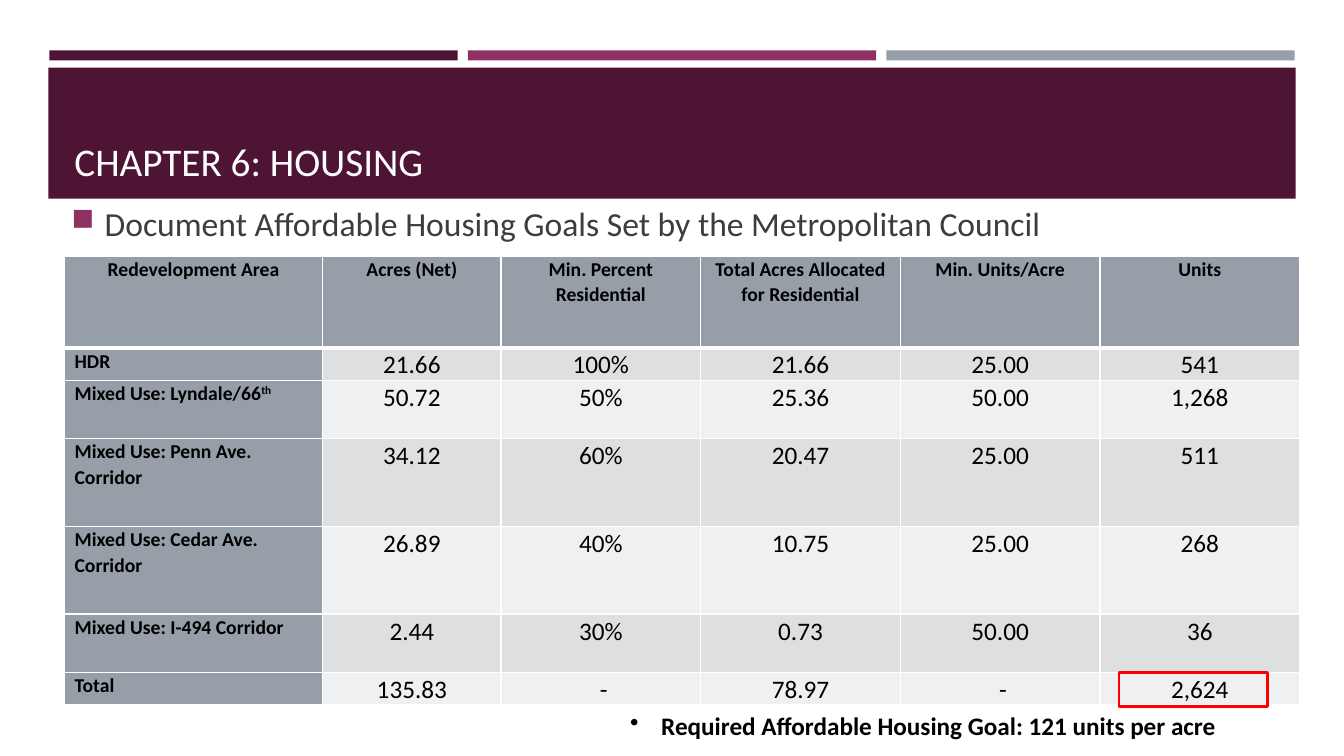
from lxml import etree
from pptx import Presentation
from pptx.dml.color import RGBColor
from pptx.enum.shapes import MSO_SHAPE
from pptx.enum.text import MSO_ANCHOR, PP_ALIGN
from pptx.oxml.ns import qn
from pptx.util import Inches, Pt

RECTANGLE = MSO_SHAPE.RECTANGLE
TOP, MIDDLE, BOTTOM = MSO_ANCHOR.TOP, MSO_ANCHOR.MIDDLE, MSO_ANCHOR.BOTTOM
LEFT, CENTER = PP_ALIGN.LEFT, PP_ALIGN.CENTER

FONT = "Calibri"
PLUM, MAGENTA, GRAY = "4D1434", "903163", "969FA7"
WHITE, BLACK, RED, CHARCOAL = "FFFFFF", "000000", "FF0000", "3D3D3D"
BANDS = ("DDDFE1", "EFF0F1")

# Three accent bars share one column step
BAR_LEFT, BAR_WIDTH, BAR_STEP = 0.49, 4.05, 4.15

TABLE_LEFT, TABLE_TOP = 0.64, 2.54
COLUMN_WIDTHS = [2.56, 1.77] + [1.98] * 4
ROW_HEIGHTS = [0.91, 0.31, 0.58, 0.87, 0.87, 0.58, 0.31]
HOUSING_ROWS = [
    ("Redevelopment Area", "Acres (Net)", "Min. Percent Residential",
     "Total Acres Allocated for Residential", "Min. Units/Acre", "Units"),
    ("HDR", "21.66", "100%", "21.66", "25.00", "541"),
    ("Mixed Use: Lyndale/66^th", "50.72", "50%", "25.36", "50.00", "1,268"),
    ("Mixed Use: Penn Ave. Corridor", "34.12", "60%", "20.47", "25.00", "511"),
    ("Mixed Use: Cedar Ave. Corridor", "26.89", "40%", "10.75", "25.00", "268"),
    ("Mixed Use: I-494 Corridor", "2.44", "30%", "0.73", "50.00", "36"),
    ("Total", "135.83", " -", "78.97", " -", "2,624"),
]


def color(value):
    return RGBColor.from_string(value)


def style_font(para, size, ink, bold=False):
    para.font.name = FONT
    para.font.size = Pt(size)
    para.font.bold = bold
    para.font.color.rgb = color(ink)


def add_rectangle(page, left, top, width, height, fill=None, line=None):
    box = page.shapes.add_shape(RECTANGLE, Inches(left), Inches(top),
                                Inches(width), Inches(height))
    box.shadow.inherit = False
    if fill:
        box.fill.solid()
        box.fill.fore_color.rgb = color(fill)
    else:
        box.fill.background()
    if line:
        box.line.color.rgb = color(line)
        box.line.width = Pt(1.75)
    else:
        box.line.fill.background()


def add_text(page, left, top, width, height, text, size, ink, anchor, bold=False):
    box = page.shapes.add_textbox(Inches(left), Inches(top),
                                  Inches(width), Inches(height))
    frame = box.text_frame
    frame.word_wrap = True
    frame.vertical_anchor = anchor
    para = frame.paragraphs[0]
    para.text = text
    style_font(para, size, ink, bold)
    return para


def add_bullet(para, mark, indent, ink, percent=100):
    properties = para._p.get_or_add_pPr()
    properties.set("marL", str(Inches(indent)))
    properties.set("indent", str(-Inches(indent)))
    bullet_color = etree.Element(qn("a:buClr"))
    etree.SubElement(bullet_color, qn("a:srgbClr"), val=ink)
    bullet_size = etree.Element(qn("a:buSzPct"), val=str(percent * 1000))
    bullet_mark = etree.Element(qn("a:buChar"), char=mark)
    # Bullet settings come just before the default run settings
    defaults = properties.find(qn("a:defRPr"))
    for part in (bullet_color, bullet_size, bullet_mark):
        defaults.addprevious(part)


def set_borders(cell, top, bottom):
    properties = cell._tc.get_or_add_tcPr()
    widths = {"a:lnL": 1, "a:lnR": 1, "a:lnT": top, "a:lnB": bottom}
    for place, (tag, width) in enumerate(widths.items()):
        border = etree.Element(qn(tag), w=str(Pt(width)))
        fill = etree.SubElement(border, qn("a:solidFill"))
        etree.SubElement(fill, qn("a:srgbClr"), val=WHITE)
        properties.insert(place, border)


def fill_cell(cell, text, row, column):
    is_heading = row == 0 or column == 0
    cell.margin_left = cell.margin_right = Inches(0.1)
    cell.margin_top = cell.margin_bottom = 0
    cell.vertical_anchor = TOP
    cell.fill.solid()
    cell.fill.fore_color.rgb = color(GRAY if is_heading else BANDS[(row - 1) % 2])
    set_borders(cell, top=3 if row == 1 else 1, bottom=3 if row == 0 else 1)

    para = cell.text_frame.paragraphs[0]
    para.alignment = LEFT if column == 0 and row > 0 else CENTER
    para.line_spacing = 1.07
    style_font(para, 14 if is_heading else 18, BLACK, is_heading)
    # A caret marks the start of a superscript
    base, _, superscript = text.partition("^")
    para.add_run().text = base
    if superscript:
        span = para.add_run()
        span.text = superscript
        span._r.get_or_add_rPr().set("baseline", "30000")


def add_housing_table(page):
    table = page.shapes.add_table(
        len(ROW_HEIGHTS), len(COLUMN_WIDTHS), Inches(TABLE_LEFT), Inches(TABLE_TOP),
        Inches(sum(COLUMN_WIDTHS)), Inches(sum(ROW_HEIGHTS))).table
    table.first_col = True
    for column, width in zip(table.columns, COLUMN_WIDTHS):
        column.width = Inches(width)
    for row, height in zip(table.rows, ROW_HEIGHTS):
        row.height = Inches(height)
    for row, texts in enumerate(HOUSING_ROWS):
        for column, text in enumerate(texts):
            fill_cell(table.cell(row, column), text, row, column)


def main():
    deck = Presentation()
    deck.slide_width, deck.slide_height = Inches(13.33), Inches(7.5)
    page = deck.slides.add_slide(deck.slide_layouts[6])

    # Accent bars and title band
    for index, fill in enumerate((PLUM, MAGENTA, GRAY)):
        add_rectangle(page, BAR_LEFT + index * BAR_STEP, 0.5, BAR_WIDTH, 0.1, fill)
    add_rectangle(page, 0.48, 0.67, 12.37, 1.3, PLUM)
    add_text(page, 0.64, 0.77, 12.06, 1.11, "CHAPTER 6: HOUSING", 28, WHITE, BOTTOM)

    # Goal statement
    goal = add_text(page, 0.61, 1.51, 11.39, 1.4,
                    "Document Affordable Housing Goals Set by the Metropolitan Council",
                    24, CHARCOAL, MIDDLE)
    goal.space_after = Pt(6)
    add_bullet(goal, "■", 0.33, MAGENTA, 92)

    # Redevelopment areas
    add_housing_table(page)

    # Required goal and highlighted total
    required = add_text(page, 6.15, 7, 6.75, 0.4,
                        "Required Affordable Housing Goal: 121 units per acre",
                        18, BLACK, TOP, bold=True)
    add_bullet(required, "•", 0.31, BLACK)
    add_rectangle(page, 11.1, 6.67, 1.47, 0.34, line=RED)

    deck.save("out.pptx")


if __name__ == "__main__":
    main()
